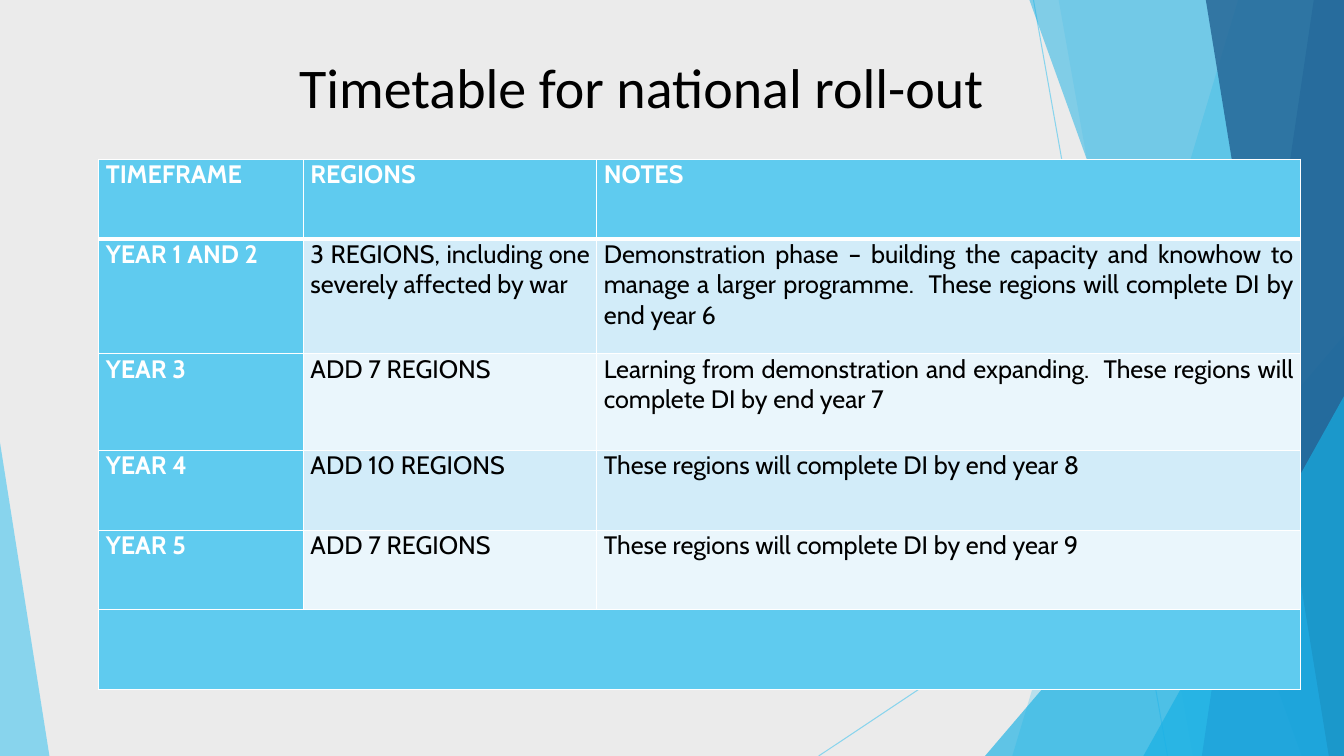
from dataclasses import dataclass

import lxml.etree
import pptx
import pptx.dml.color
import pptx.enum.shapes
import pptx.enum.text
import pptx.oxml
import pptx.oxml.ns
import pptx.util
from pptx.util import Inches

SLIDE_WIDTH = 13.33
SLIDE_HEIGHT = 7.5
COLORS = {
    "background": "EBEBEB",
    "sky": "5FCBEF",
    "azure": "17B0E4",
    "blue": "2E83C3",
    "navy": "226292",
    "odd_row": "D2ECF9",
    "even_row": "EAF6FC",
    "white": "FFFFFF",
    "black": "000000",
}
ALIGN = pptx.enum.text.PP_ALIGN


@dataclass
class Ray:
    start: tuple[float, float]
    end: tuple[float, float]


@dataclass
class Band:
    top_x: float
    bottom_x: float
    color: str
    opacity: int


@dataclass
class Triangle:
    left: float
    top: float
    width: float
    apex: float
    color: str
    opacity: int


RAYS = [
    Ray((10.25, 0), (11.58, SLIDE_HEIGHT)),
    Ray((SLIDE_WIDTH, 4.03), (8.12, SLIDE_HEIGHT)),
]
FACETS = [
    Band(12.28, 10.04, "sky", 36),
    Band(10.5, 11.83, "sky", 20),
    Triangle(9.77, 3.33, 3.56, 1, "azure", 66),
    Band(10.21, 12.91, "azure", 50),
    Band(13.03, 11.92, "blue", 70),
    Band(11.96, 13.18, "navy", 80),
    Triangle(11.34, 3.93, 1.99, 1, "azure", 66),
    Triangle(0, 4.39, 0.49, 0, "sky", 70),
]
COLUMN_WIDTHS = [2.03, 2.91, 6.98]
ROW_HEIGHTS = [0.79, 1.14, 0.96, 0.79, 0.79, 0.79]
ROLL_OUT = [
    ("TIMEFRAME", "REGIONS", "NOTES"),
    (
        "YEAR 1 AND 2",
        "3 REGIONS, including one severely affected by war",
        "Demonstration phase – building the capacity and knowhow to manage "
        "a larger programme.  These regions will complete DI by end year 6",
    ),
    (
        "YEAR 3",
        "ADD 7 REGIONS",
        "Learning from demonstration and expanding.  "
        "These regions will complete DI by end year 7",
    ),
    ("YEAR 4", "ADD 10 REGIONS", "These regions will complete DI by end year 8"),
    ("YEAR 5", "ADD 7 REGIONS", "These regions will complete DI by end year 9"),
    ("", "", ""),
]


def rgb(name: str) -> pptx.dml.color.RGBColor:
    return pptx.dml.color.RGBColor.from_string(COLORS[name])


def set_opacity(element, percent: int) -> None:
    color = element.find(".//" + pptx.oxml.ns.qn("a:srgbClr"))
    alpha = lxml.etree.SubElement(color, pptx.oxml.ns.qn("a:alpha"))
    alpha.set("val", str(percent * 1000))


def write_text(frame, text: str, *, font: str, size: float, color: str,
               bold: bool = False, align=ALIGN.LEFT) -> None:
    paragraph = frame.paragraphs[0]
    paragraph.alignment = align
    run = paragraph.add_run()
    run.text = text
    run.font.name = font
    run.font.size = pptx.util.Pt(size)
    run.font.bold = bold
    run.font.color.rgb = rgb(color)


def draw_ray(slide, ray: Ray) -> None:
    connector = slide.shapes.add_connector(
        pptx.enum.shapes.MSO_CONNECTOR.STRAIGHT,
        *(Inches(value) for value in (*ray.start, *ray.end)),
    )
    connector.line.color.rgb = rgb("sky")
    connector.line.width = pptx.util.Pt(0.75)
    properties = connector._element.spPr
    set_opacity(properties, 70)
    lxml.etree.SubElement(properties, pptx.oxml.ns.qn("a:effectLst"))


def draw_facet(slide, facet: Band | Triangle) -> None:
    if isinstance(facet, Band):
        builder = slide.shapes.build_freeform(Inches(facet.top_x), 0)
        corners = [(SLIDE_WIDTH, 0), (SLIDE_WIDTH, SLIDE_HEIGHT),
                   (facet.bottom_x, SLIDE_HEIGHT)]
        builder.add_line_segments([(Inches(x), Inches(y)) for x, y in corners])
        shape = builder.convert_to_shape()
    else:
        shape = slide.shapes.add_shape(
            pptx.enum.shapes.MSO_SHAPE.ISOSCELES_TRIANGLE,
            Inches(facet.left), Inches(facet.top),
            Inches(facet.width), Inches(SLIDE_HEIGHT - facet.top),
        )
        shape.adjustments[0] = facet.apex
    shape.shadow.inherit = False
    shape.line.fill.background()
    shape.fill.solid()
    shape.fill.fore_color.rgb = rgb(facet.color)
    set_opacity(shape._element.spPr, facet.opacity)


def draw_title(slide, text: str) -> None:
    box = slide.shapes.add_textbox(
        Inches(0.74), Inches(0.47), Inches(11.24), Inches(1.1))
    box.text_frame.word_wrap = True
    write_text(box.text_frame, text, font="Calibri", size=40,
               color="black", align=ALIGN.CENTER)


def set_borders(cell, top: float, bottom: float) -> None:
    properties = cell._tc.get_or_add_tcPr()
    for side, width in (("L", 1), ("R", 1), ("T", top), ("B", bottom)):
        properties.append(pptx.oxml.parse_xml(
            f'<a:ln{side} {pptx.oxml.ns.nsdecls("a")} w="{pptx.util.Pt(width)}">'
            f'<a:solidFill><a:srgbClr val="{COLORS["white"]}"/></a:solidFill>'
            f'</a:ln{side}>'
        ))


def draw_table(slide) -> None:
    table = slide.shapes.add_table(
        len(ROW_HEIGHTS), len(COLUMN_WIDTHS), Inches(0.98), Inches(1.58),
        Inches(sum(COLUMN_WIDTHS)), Inches(sum(ROW_HEIGHTS)),
    ).table
    for column, width in zip(table.columns, COLUMN_WIDTHS):
        column.width = Inches(width)
    last_row = len(ROLL_OUT) - 1
    for row_index, (texts, height) in enumerate(zip(ROLL_OUT, ROW_HEIGHTS)):
        table.rows[row_index].height = Inches(height)
        for column_index, text in enumerate(texts):
            cell = table.cell(row_index, column_index)
            accent = row_index in (0, last_row) or column_index == 0
            stripe = "odd_row" if row_index % 2 else "even_row"
            set_borders(cell, top=3 if row_index == 1 else 1,
                        bottom=3 if row_index == 0 else 1)
            cell.fill.solid()
            cell.fill.fore_color.rgb = rgb("sky" if accent else stripe)
            cell.margin_left = cell.margin_right = Inches(0.07)
            cell.margin_top = cell.margin_bottom = 0
            if text:
                write_text(cell.text_frame, text, font="Cabin", size=18,
                           color="white" if accent else "black",
                           bold=accent, align=ALIGN.JUSTIFY)
    table.cell(last_row, 0).merge(table.cell(last_row, len(COLUMN_WIDTHS) - 1))


def main() -> None:
    presentation = pptx.Presentation()
    presentation.slide_width = Inches(SLIDE_WIDTH)
    presentation.slide_height = Inches(SLIDE_HEIGHT)
    slide = presentation.slides.add_slide(presentation.slide_layouts[6])
    slide.background.fill.solid()
    slide.background.fill.fore_color.rgb = rgb("background")
    for ray in RAYS:
        draw_ray(slide, ray)
    for facet in FACETS:
        draw_facet(slide, facet)
    draw_title(slide, "Timetable for national roll-out")
    draw_table(slide)
    presentation.save("out.pptx")


if __name__ == "__main__":
    main()
